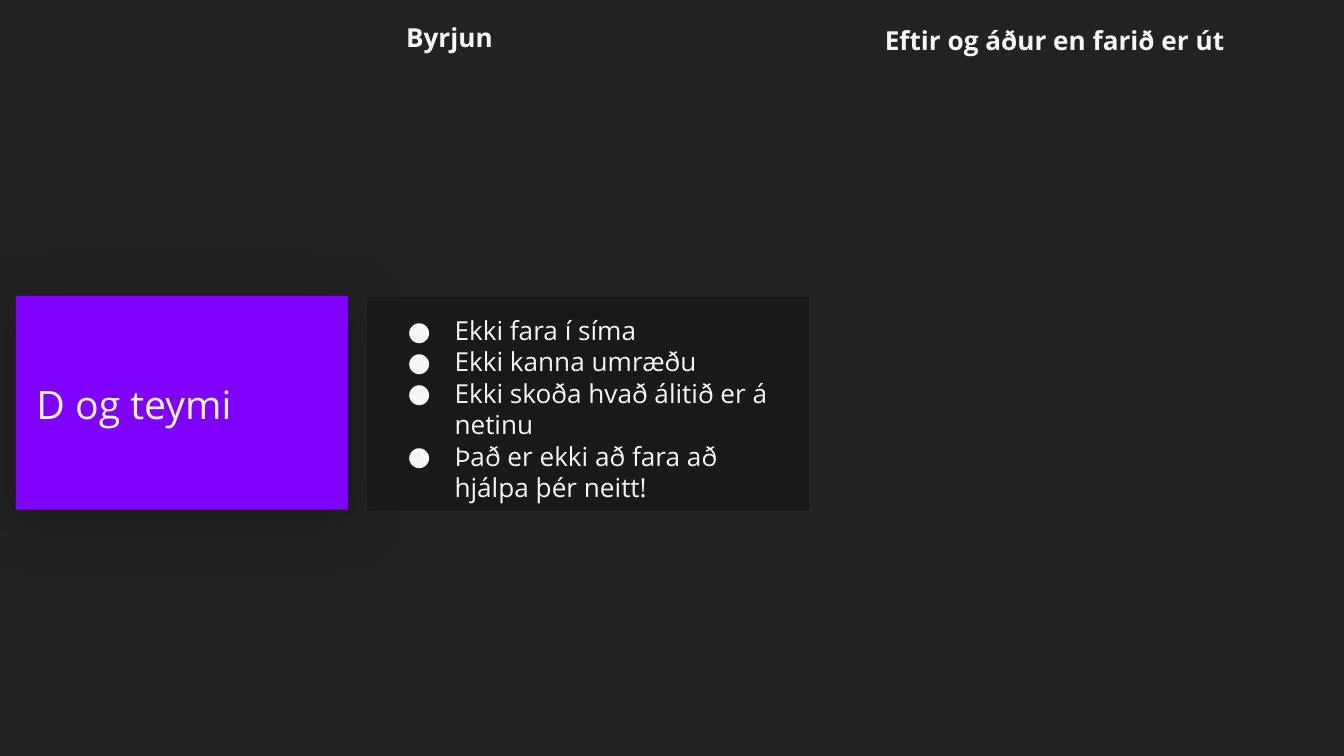
from lxml import etree
from pptx import Presentation
from pptx import util as u
from pptx.dml.color import RGBColor
from pptx.enum import shapes, text
from pptx.oxml import ns

BACK = RGBColor(0x22, 0x22, 0x22)
PANEL = RGBColor(0x19, 0x19, 0x19)
VIOLET = RGBColor(0x7F, 0x00, 0xFF)
PALE = RGBColor(0xF7, 0xF7, 0xF7)

RULES = ["Ekki fara í síma", "Ekki kanna umræðu",
         "Ekki skoða hvað álitið er á netinu",
         "Það er ekki að fara að hjálpa þér neitt!"]


def put(item, vals):
    for name, val in vals.items():
        setattr(item, name, val)


def add(root, tag, **vals):
    return etree.SubElement(root, ns.qn(tag), {k: str(v) for k, v in vals.items()})


class Board:
    face = "Open Sans"
    ink = PALE
    frame = {"margin_left": u.Pt(5), "margin_right": u.Pt(5),
             "margin_top": u.Pt(3), "margin_bottom": u.Pt(3),
             "word_wrap": True, "auto_size": text.MSO_AUTO_SIZE.SHAPE_TO_FIT_TEXT}

    def __init__(self, deck):
        self.slide = deck.slides.add_slide(deck.slide_layouts[6])
        fill = self.slide.background.fill
        fill.solid()
        fill.fore_color.rgb = BACK

    def group(self):
        return self.slide.shapes.add_group_shape().shapes

    def rect(self, home, spot, color):
        box = home.add_shape(shapes.MSO_SHAPE.RECTANGLE, *map(u.Pt, spot))
        box.shadow.inherit = False
        box.fill.solid()
        box.fill.fore_color.rgb = color
        box.line.fill.background()
        return box

    def shade(self, box):
        glow = box._element.spPr.find(ns.qn("a:effectLst"))
        cast = add(glow, "a:outerShdw", blurRad=u.Pt(30), dist=u.Pt(5),
                   dir=5400000, algn="ctr", rotWithShape=0)
        tint = add(cast, "a:srgbClr", val="000000")
        add(tint, "a:alpha", val=30000)

    def words(self, home, spot, lines, size=14, bold=False, dots=False,
              anchor=text.MSO_ANCHOR.TOP):
        frame = home.add_textbox(*map(u.Pt, spot)).text_frame
        put(frame, {**self.frame, "vertical_anchor": anchor})
        frame.text = "\n".join(lines)
        for para in frame.paragraphs:
            para.line_spacing = u.Pt(size * 1.2)
            font = para.runs[0].font
            put(font, {"name": self.face, "size": u.Pt(size), "bold": bold})
            font.color.rgb = self.ink
            if dots:
                self.dot(para)

    def dot(self, para):
        prop = para._p.get_or_add_pPr()
        prop.set("marL", str(u.Pt(36)))
        prop.set("indent", str(u.Pt(-25)))
        add(add(prop, "a:buClr"), "a:srgbClr", val=self.ink)
        add(prop, "a:buFont", typeface=self.face)
        add(prop, "a:buChar", char="●")


def main():
    deck = Presentation()
    put(deck, {"slide_width": u.Pt(720), "slide_height": u.Pt(405)})
    board = Board(deck)
    home = board.slide.shapes

    team = board.group()
    board.shade(board.rect(team, (8.5, 158.5, 178, 114.5), VIOLET))
    board.words(team, (14.5, 201, 140, 31), ["D og teymi"], size=21,
                anchor=text.MSO_ANCHOR.MIDDLE)

    board.rect(home, (196.5, 159, 237, 114.5), PANEL)
    board.words(home, (202.5, 165.5, 217, 124.5), RULES, dots=True)

    for left, top, title in [(212.5, 8.5, "Byrjun"),
                             (469, 10, "Eftir og áður en farið er út")]:
        board.words(home, (left, top, 217, 22.5), [title], bold=True)

    deck.save("out.pptx")


if __name__ == "__main__":
    main()
